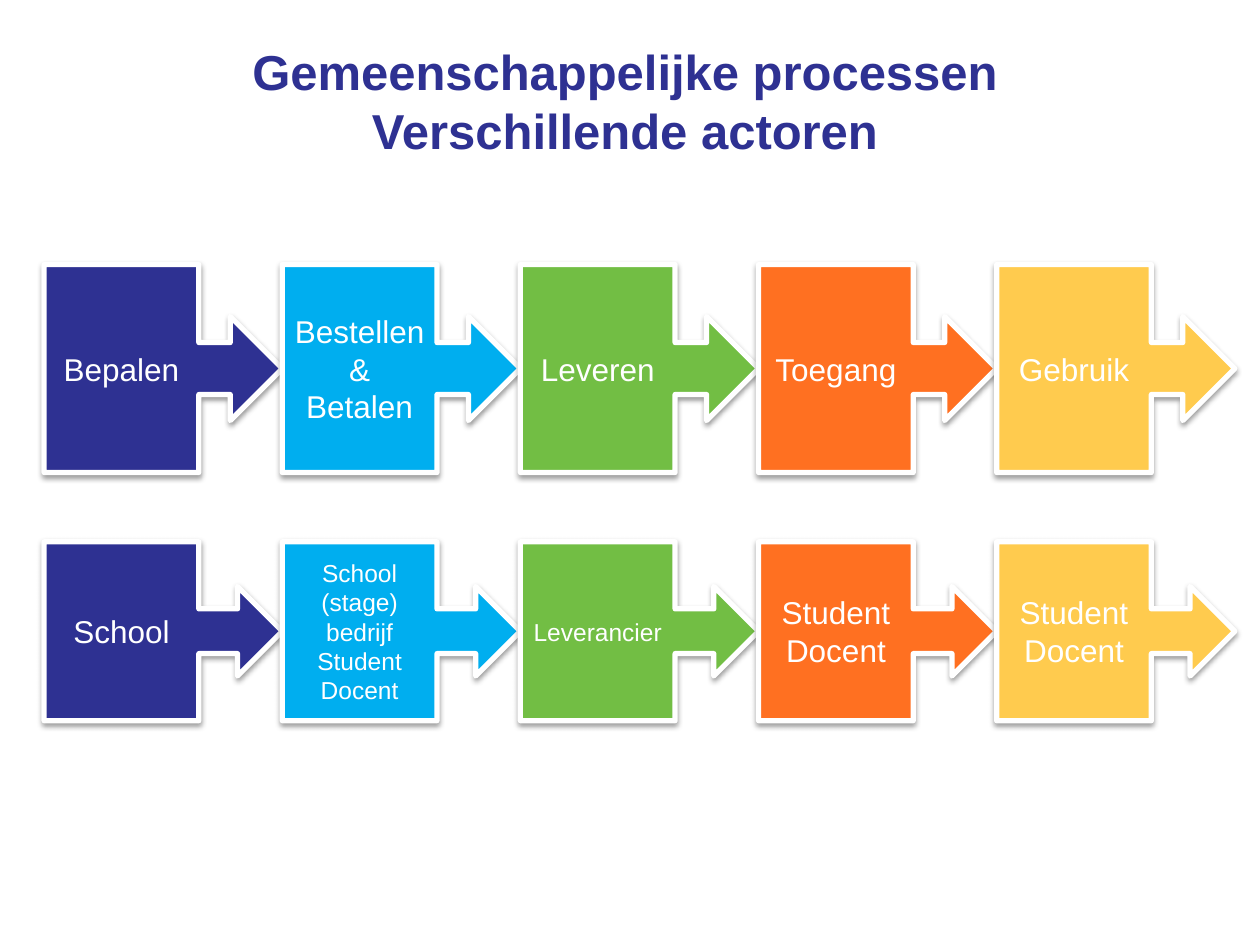
from lxml.etree import SubElement
from pptx import Presentation
from pptx.dml.color import RGBColor
from pptx.enum.shapes import MSO_SHAPE
from pptx.enum.text import MSO_ANCHOR, PP_ALIGN
from pptx.oxml.ns import qn
from pptx.util import Inches, Pt

COLORS = {
    "navy": "2E3192",
    "blue": "00AEEF",
    "green": "72BE44",
    "orange": "FF7021",
    "yellow": "FFCB4E",
    "white": "FFFFFF",
    "shadow": "000000",
}
STEP_COLORS = ["navy", "blue", "green", "orange", "yellow"]
LEFT, STEP_WIDTH = 0.35, 1.89

# Each row: top, height, and (paragraphs, text size) for every step
ROWS = [
    (2.1, 1.65, [
        (["Bepalen"], 18),
        (["Bestellen& Betalen"], 18),
        (["Leveren"], 18),
        (["Toegang"], 18),
        (["Gebruik"], 18),
    ]),
    (4.3, 1.42, [
        (["School"], 18),
        (["School", "(stage) bedrijf", "Student", "Docent"], 14),
        (["Leverancier"], 14),
        (["Student", "Docent"], 18),
        (["Student", "Docent"], 18),
    ]),
]


class SlideBuilder:
    """Holds the text style and the slide being filled."""

    font_name = "Arial"

    def __init__(self, page):
        self.page = page

    def color(self, name):
        return RGBColor.from_string(COLORS[name])

    def add_span(self, paragraph, text, size, color, bold=False):
        span = paragraph.add_run()
        span.text = text
        span.font.name = self.font_name
        span.font.size = Pt(size)
        span.font.bold = bold
        span.font.color.rgb = self.color(color)

    def title(self, lines, left, top, width, height):
        box = self.page.shapes.add_textbox(
            Inches(left), Inches(top), Inches(width), Inches(height))
        frame = box.text_frame
        frame.word_wrap = True
        frame.margin_left = frame.margin_right = 0
        frame.margin_top = frame.margin_bottom = 0
        paragraph = frame.paragraphs[0]
        paragraph.alignment = PP_ALIGN.CENTER
        for index, line in enumerate(lines):
            if index:
                paragraph.add_line_break()
            self.add_span(paragraph, line, 28, "navy", bold=True)

    def step(self, lines, size, fill, left, top, height):
        """Add an arrow callout that points at the next step."""
        callout = self.page.shapes.add_shape(
            MSO_SHAPE.RIGHT_ARROW_CALLOUT,
            Inches(left), Inches(top), Inches(STEP_WIDTH), Inches(height))
        callout.fill.solid()
        callout.fill.fore_color.rgb = self.color(fill)
        callout.line.color.rgb = self.color("white")
        callout.line.width = Pt(3)
        self.drop_shadow(callout)
        frame = callout.text_frame
        frame.word_wrap = True
        frame.vertical_anchor = MSO_ANCHOR.MIDDLE
        for index, line in enumerate(lines):
            paragraph = frame.add_paragraph() if index else frame.paragraphs[0]
            paragraph.alignment = PP_ALIGN.CENTER
            self.add_span(paragraph, line, size, "white")

    def drop_shadow(self, shape):
        shape.shadow.inherit = False
        effects = shape.element.spPr.find(qn("a:effectLst"))
        shadow = SubElement(
            effects, qn("a:outerShdw"), blurRad=str(Pt(3.1)),
            dist=str(Pt(1.6)), dir="5400000", rotWithShape="0")
        color = SubElement(shadow, qn("a:srgbClr"), val=COLORS["shadow"])
        SubElement(color, qn("a:alpha"), val="38000")


def main():
    deck = Presentation()
    deck.slide_width, deck.slide_height = Inches(10), Inches(7.5)
    builder = SlideBuilder(deck.slides.add_slide(deck.slide_layouts[6]))
    builder.title(["Gemeenschappelijke processen", "Verschillende actoren"],
                  0.43, 0.33, 9.06, 0.64)
    for top, height, steps in ROWS:
        for index, (lines, size) in enumerate(steps):
            builder.step(lines, size, STEP_COLORS[index],
                         LEFT + index * STEP_WIDTH, top, height)
    deck.save("out.pptx")


if __name__ == "__main__":
    main()
